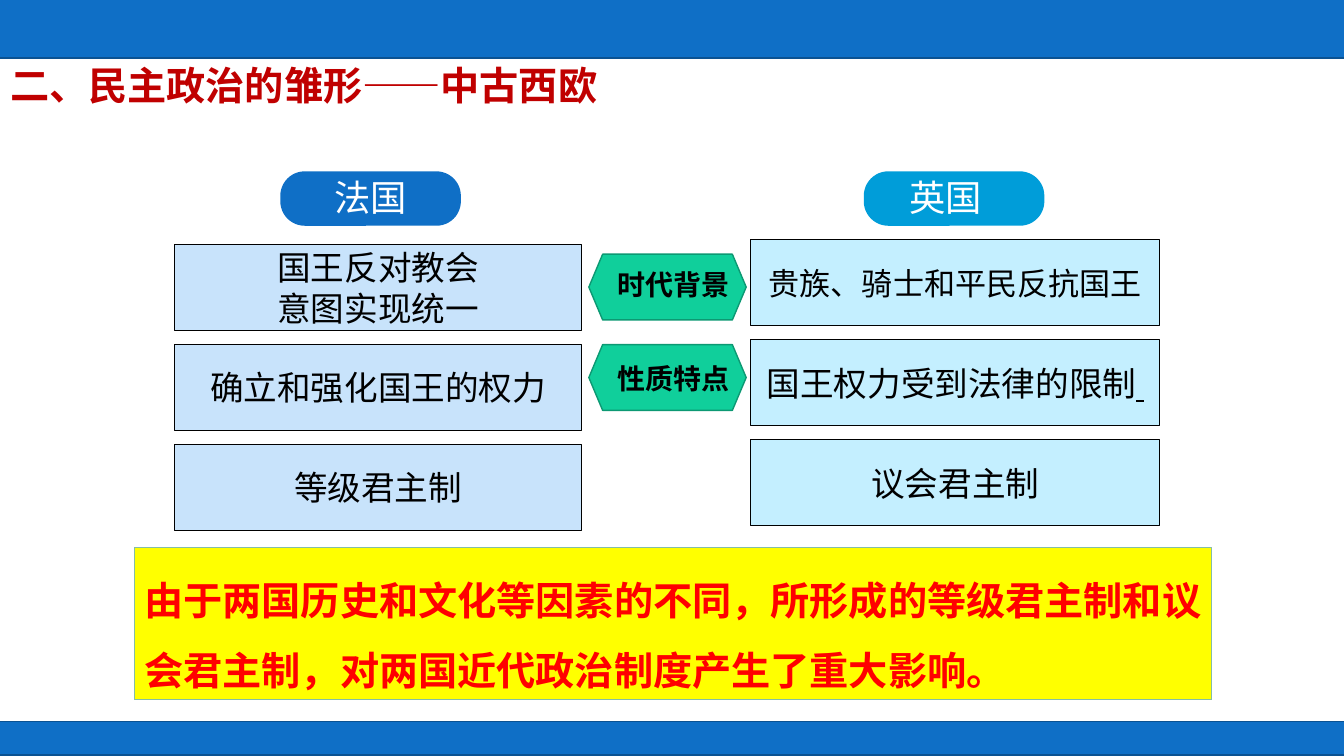
from lxml.etree import SubElement
from pptx import Presentation
from pptx.dml.color import RGBColor
from pptx.enum.shapes import MSO_SHAPE
from pptx.enum.text import MSO_ANCHOR, MSO_AUTO_SIZE, PP_ALIGN
from pptx.oxml.ns import qn
from pptx.util import Pt

COLORS = {
    "blue": "0F6FC6", "blue edge": "0B5292", "sky": "009DD9",
    "france": "C8E3FB", "england": "C4EFFF",
    "green": "10CF9B", "green edge": "0C9973",
    "yellow": "FFFF00", "yellow edge": "84BDA7",
    "black": "000000", "white": "FFFFFF", "red": "FF0000", "dark red": "C00000",
}
FONT = "Noto Sans CJK SC"
CELL_INSETS = (9.4, 5)
TEXT_INSETS = (7.2, 3.6)


def color(name):
    return RGBColor.from_string(COLORS[name])


def add_span(para, text, size, ink, bold=False, underline=False):
    span = para.add_run()
    span.text = text
    font = span.font
    font.name, font.size, font.bold = FONT, Pt(size), bold
    font.color.rgb = color(ink)
    if underline:
        font.underline = True
    SubElement(font._element, qn("a:ea"), typeface=FONT)


def write(box, text, size, ink="black", bold=False, align=PP_ALIGN.LEFT,
          anchor=MSO_ANCHOR.TOP, spacing=None, insets=TEXT_INSETS,
          wrap=True, grow=False, underlined_tail=""):
    """Fill a box with one paragraph per line of text."""
    frame = box.text_frame
    frame.word_wrap = wrap
    frame.auto_size = MSO_AUTO_SIZE.SHAPE_TO_FIT_TEXT if grow else MSO_AUTO_SIZE.NONE
    frame.vertical_anchor = anchor
    frame.margin_left = frame.margin_right = Pt(insets[0])
    frame.margin_top = frame.margin_bottom = Pt(insets[1])
    for index, line in enumerate(text.split("\n")):
        para = frame.add_paragraph() if index else frame.paragraphs[0]
        para.alignment = align
        if spacing:
            para.line_spacing = spacing
        add_span(para, line, size, ink, bold)
    if underlined_tail:
        add_span(para, underlined_tail, size, ink, bold, underline=True)


class ComparisonPage:
    def __init__(self, deck):
        self.page = deck.slides.add_slide(deck.slide_layouts[5])

    def title(self, text, left, top, width, height):
        box = self.page.shapes.title
        box.left, box.top, box.width, box.height = map(Pt, (left, top, width, height))
        write(box, text, 28, "dark red", bold=True, wrap=False, grow=True)

    def shape(self, kind, left, top, width, height, fill, edge=None, weight=1):
        shape = self.page.shapes.add_shape(kind, *map(Pt, (left, top, width, height)))
        shape.shadow.inherit = False
        shape.fill.solid()
        shape.fill.fore_color.rgb = color(fill)
        if edge:
            shape.line.color.rgb = color(edge)
            shape.line.width = Pt(weight)
        else:
            shape.line.fill.background()
        return shape

    def text(self, text, left, top, width, height, size, **style):
        box = self.page.shapes.add_textbox(*map(Pt, (left, top, width, height)))
        write(box, text, size, **style)

    def band(self, left, top, width, height):
        self.shape(MSO_SHAPE.RECTANGLE, left, top, width, height, "blue", "blue edge")

    def country(self, name, left, text_left, fill):
        pill = self.shape(MSO_SHAPE.ROUNDED_RECTANGLE, left, 122.4, 129, 38.9, fill)
        pill.adjustments[0] = 0.45
        self.text(name, text_left, 123.1, 103, 38.9, 25.9, ink="white", spacing=0.9,
                  align=PP_ALIGN.CENTER, anchor=MSO_ANCHOR.MIDDLE, insets=CELL_INSETS)

    def column(self, cells, left, top, width, fill):
        """Stack cells given as (text, size, underlined tail)."""
        for row, (text, size, tail) in enumerate(cells):
            cell = self.shape(MSO_SHAPE.RECTANGLE, left, top + 71.4 * row, width, 61.2,
                              fill, "black", 0.75)
            write(cell, text, size, align=PP_ALIGN.CENTER, anchor=MSO_ANCHOR.MIDDLE,
                  insets=CELL_INSETS, underlined_tail=tail)

    def aspect(self, name, top, text_top, text_width):
        hexagon = self.shape(MSO_SHAPE.HEXAGON, 420.6, top, 112.4, 47, "green", "green edge")
        hexagon.adjustments[0] = 0.21
        self.text(name, 434.2, text_top, text_width, 31.7, 20, bold=True, grow=True)

    def conclusion(self, text, left, top, width, height):
        box = self.shape(MSO_SHAPE.RECTANGLE, left, top, width, height,
                         "yellow", "yellow edge", 0.75)
        write(box, text, 28, "red", bold=True, spacing=1.5, grow=True)


def main():
    deck = Presentation()
    deck.slide_width, deck.slide_height = Pt(960), Pt(540)
    page = ComparisonPage(deck)
    page.band(-5, -0.7, 967.7, 42.2)
    page.band(-0.7, 515.5, 967.7, 23.8)
    page.title("二、民主政治的雏形——中古西欧", 0, 40.3, 440.6, 41)

    page.country("法国", 200.2, 213.1, "blue")
    page.country("英国", 617, 624.2, "sky")
    page.column([("国王反对教会\n意图实现统一", 24, ""),
                 ("确立和强化国王的权力", 24, ""),
                 ("等级君主制", 24, "")], 124.6, 174.8, 290.9, "france")
    page.column([("贵族、骑士和平民反抗国王", 22.2, ""),
                 ("国王权力受到法律的限制", 24, " "),
                 ("议会君主制", 24, "")], 536.2, 171.4, 292.3, "england")
    page.aspect("时代背景", 181.6, 187.2, 130.3)
    page.aspect("性质特点", 246.2, 254.9, 98)
    page.conclusion("由于两国历史和文化等因素的不同，所形成的等级君主制和议会君主制，"
                    "对两国近代政治制度产生了重大影响。", 96, 391, 769.7, 108.9)
    deck.save("out.pptx")


if __name__ == "__main__":
    main()
